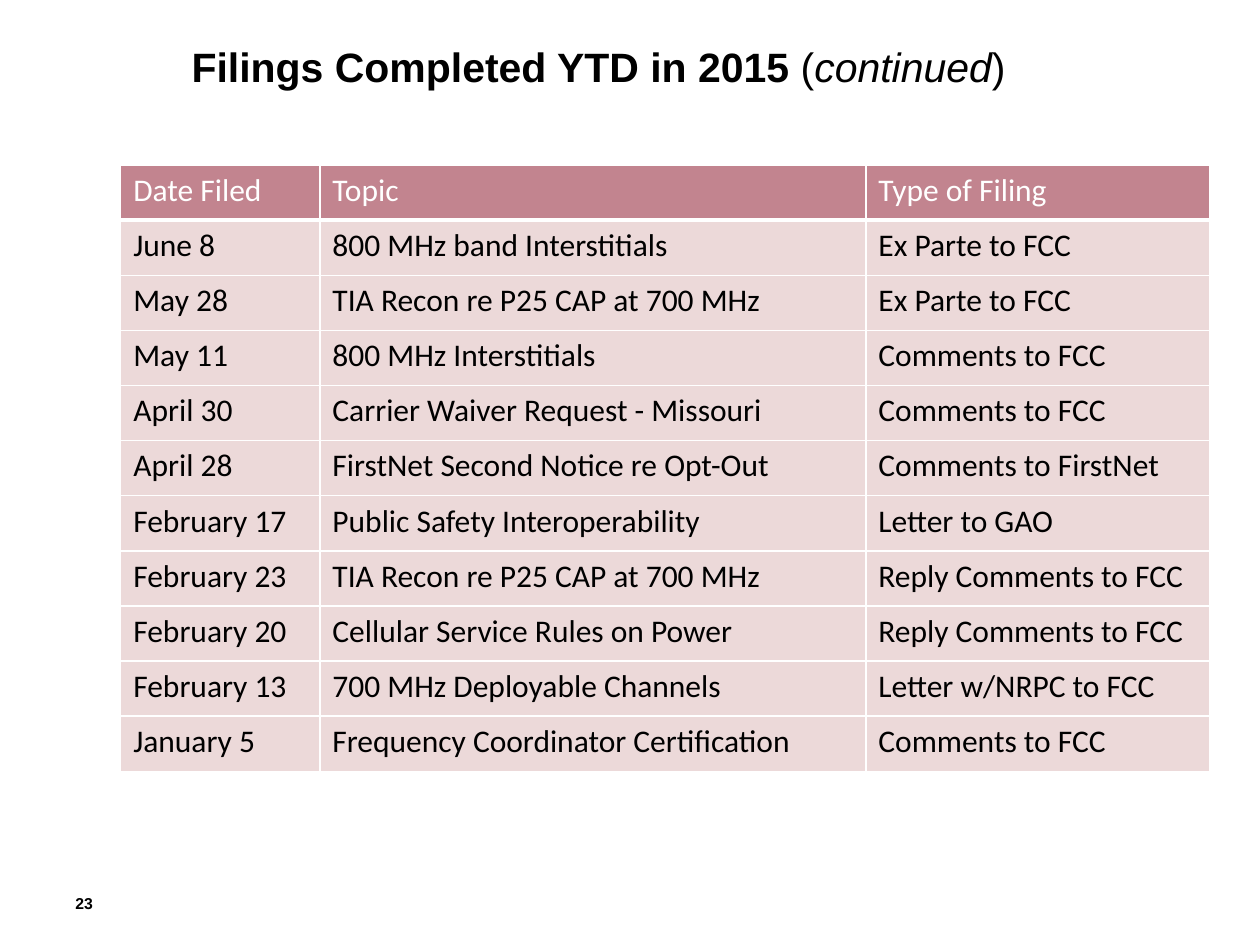
from dataclasses import dataclass

from lxml.etree import SubElement
from pptx import Presentation
from pptx.dml.color import RGBColor
from pptx.enum.text import MSO_ANCHOR, MSO_AUTO_SIZE, PP_ALIGN
from pptx.oxml.ns import qn
from pptx.util import Pt


@dataclass(frozen=True)
class Theme:
    """Colours, fonts and type sizes of the slide."""

    ink: str = "000000"
    paper: str = "FFFFFF"
    header_fill: tuple = ("870A21", 50)
    body_fill: tuple = ("800000", 15)
    heading_font: str = "Arial"
    table_font: str = "Calibri"
    title_size: float = 23.4
    table_size: float = 18
    number_size: float = 9


THEME = Theme()
COLUMN_WIDTHS = (113.8, 312, 196.8)
ROW_HEIGHT = 31.5
HEADERS = ("Date Filed", "Topic", "Type of Filing")
FILINGS = (
    ("June 8", "800 MHz band Interstitials", "Ex Parte to FCC"),
    ("May 28", "TIA Recon re P25 CAP at 700 MHz", "Ex Parte to FCC"),
    ("May 11", "800 MHz Interstitials", "Comments to FCC"),
    ("April 30", "Carrier Waiver Request - Missouri", "Comments to FCC"),
    ("April 28", "FirstNet Second Notice re Opt-Out", "Comments to FirstNet"),
    ("February 17", "Public Safety Interoperability", "Letter to GAO"),
    ("February 23", "TIA Recon re P25 CAP at 700 MHz", "Reply Comments to FCC"),
    ("February 20", "Cellular Service Rules on Power", "Reply Comments to FCC"),
    ("February 13", "700 MHz Deployable Channels", "Letter w/NRPC to FCC"),
    ("January 5", "Frequency Coordinator Certification", "Comments to FCC"),
)


def add_span(para, text, *, font, size, color=THEME.ink, bold=False, italic=False):
    """Append formatted text to a paragraph."""
    span = para.add_run()
    span.text = text
    span.font.name = font
    span.font.size = Pt(size)
    span.font.bold = bold
    span.font.italic = italic
    span.font.color.rgb = RGBColor.from_string(color)


def add_solid_fill(parent, color, opacity=100):
    """Add a solid fill with an opacity in percent to an XML element."""
    fill = SubElement(parent, qn("a:solidFill"))
    shade = SubElement(fill, qn("a:srgbClr"), val=color)
    if opacity < 100:
        SubElement(shade, qn("a:alpha"), val=str(opacity * 1000))


def style_cell(cell, fill, bottom_width):
    """Give a table cell its borders and translucent fill."""
    properties = cell._tc.get_or_add_tcPr()
    widths = {"a:lnL": 1, "a:lnR": 1, "a:lnT": 1, "a:lnB": bottom_width}
    for side, width in widths.items():
        add_solid_fill(SubElement(properties, qn(side), w=str(Pt(width))), THEME.paper)
    add_solid_fill(properties, *fill)


def add_title(page):
    """Place and write the slide title."""
    title = page.shapes.title
    title.left, title.top, title.width, title.height = Pt(109.5), Pt(13), Pt(513.5), Pt(77)
    frame = title.text_frame
    frame.auto_size = MSO_AUTO_SIZE.NONE
    frame.word_wrap = True
    frame.vertical_anchor = MSO_ANCHOR.MIDDLE
    frame.margin_left = frame.margin_top = frame.margin_right = 0
    frame.margin_bottom = Pt(27)
    para = frame.paragraphs[0]
    para.alignment = PP_ALIGN.LEFT
    style = {"font": THEME.heading_font, "size": THEME.title_size}
    add_span(para, "Filings Completed YTD in 2015 ", bold=True, **style)
    add_span(para, "(", **style)
    add_span(para, "continued", italic=True, **style)
    add_span(para, ")", **style)


def add_filings_table(page):
    """Add the table of filings."""
    rows = (HEADERS, *FILINGS)
    frame = page.shapes.add_table(
        len(rows), len(HEADERS), Pt(69), Pt(94.3),
        Pt(sum(COLUMN_WIDTHS)), Pt(ROW_HEIGHT * len(rows)),
    )
    table = frame.table
    table.horz_banding = False
    for column, width in zip(table.columns, COLUMN_WIDTHS):
        column.width = Pt(width)
    for index, (row, texts) in enumerate(zip(table.rows, rows)):
        row.height = Pt(ROW_HEIGHT)
        is_header = index == 0
        color = THEME.paper if is_header else THEME.ink
        fill = THEME.header_fill if is_header else THEME.body_fill
        for cell, text in zip(row.cells, texts):
            add_span(cell.text_frame.paragraphs[0], text, font=THEME.table_font,
                     size=THEME.table_size, color=color)
            style_cell(cell, fill, bottom_width=3 if is_header else 1)


def add_page_number(page, number):
    """Add the page number at the lower left."""
    box = page.shapes.add_textbox(Pt(36), Pt(502), Pt(72.7), Pt(28.8))
    box.text_frame.word_wrap = True
    box.text_frame.vertical_anchor = MSO_ANCHOR.MIDDLE
    add_span(box.text_frame.paragraphs[0], number, font=THEME.heading_font,
             size=THEME.number_size, bold=True)


def main():
    """Build and save the slide."""
    deck = Presentation()
    deck.slide_width, deck.slide_height = Pt(720), Pt(540)
    page = deck.slides.add_slide(deck.slide_layouts[5])
    add_title(page)
    add_filings_table(page)
    add_page_number(page, "23")
    deck.save("out.pptx")


if __name__ == "__main__":
    main()
